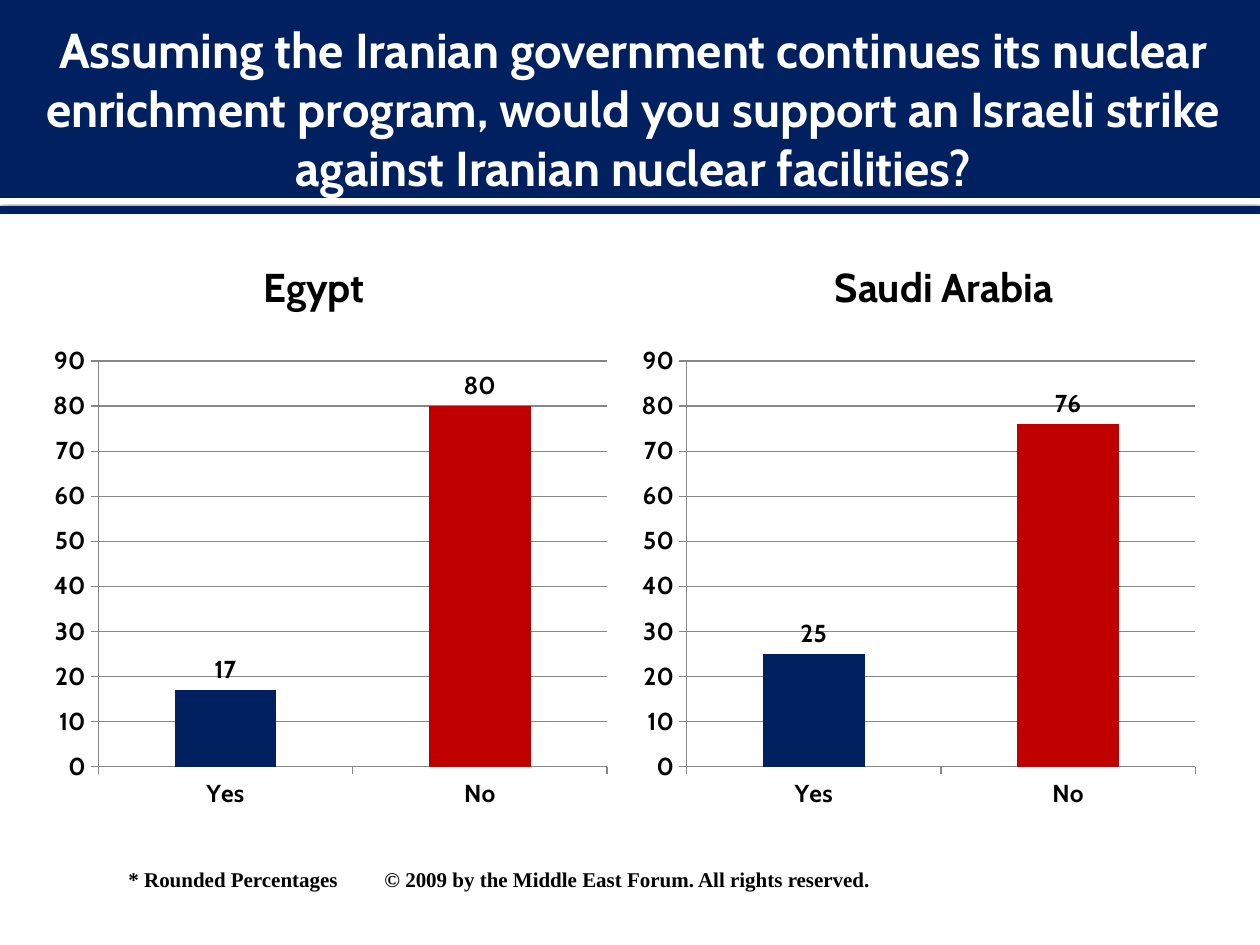
from dataclasses import dataclass

from lxml.etree import SubElement
from pptx import Presentation
from pptx.chart.data import CategoryChartData
from pptx.dml.color import RGBColor
from pptx.enum.chart import XL_CHART_TYPE, XL_LABEL_POSITION, XL_TICK_MARK
from pptx.enum.shapes import MSO_CONNECTOR, MSO_SHAPE
from pptx.enum.text import MSO_ANCHOR, MSO_AUTO_SIZE, PP_ALIGN
from pptx.oxml import parse_xml
from pptx.oxml.ns import nsdecls, qn
from pptx.util import Cm, Pt


@dataclass(frozen=True)
class Theme:
    navy: RGBColor = RGBColor(0x00, 0x20, 0x60)
    red: RGBColor = RGBColor(0xC0, 0x00, 0x00)
    white: RGBColor = RGBColor(0xFF, 0xFF, 0xFF)
    black: RGBColor = RGBColor(0x00, 0x00, 0x00)
    grid: RGBColor = RGBColor(0x87, 0x87, 0x87)
    font: str = "Cabin"
    footer_font: str = "Times New Roman"
    title_size: int = 28
    heading_size: int = 23
    chart_size: int = 14
    footer_size: int = 12


SOFT_SHADOW = (
    f'<a:effectLst {nsdecls("a")}>'
    '<a:outerShdw blurRad="63500" dist="10160" dir="5400000" rotWithShape="0">'
    '<a:srgbClr val="000000"><a:alpha val="60000"/></a:srgbClr>'
    '</a:outerShdw></a:effectLst>'
)


class SlideBuilder:
    def __init__(self, page, theme):
        self.page = page
        self.theme = theme

    def style_font(self, font, size, color, name=None):
        font.name = name or self.theme.font
        font.size = Pt(size)
        font.bold = True
        font.color.rgb = color

    def fill_text(self, box, text, size, color, margins):
        """Set centred bold text; margins are left, top, right, bottom in cm."""
        frame = box.text_frame
        frame.text = text
        frame.word_wrap = True
        frame.auto_size = MSO_AUTO_SIZE.NONE
        frame.vertical_anchor = MSO_ANCHOR.MIDDLE
        (frame.margin_left, frame.margin_top,
         frame.margin_right, frame.margin_bottom) = map(Cm, margins)
        paragraph = frame.paragraphs[0]
        paragraph.alignment = PP_ALIGN.CENTER
        self.style_font(paragraph.runs[0].font, size, color)

    def band(self, top, height, color, shadow=False):
        box = self.page.shapes.add_shape(
            MSO_SHAPE.RECTANGLE, 0, Cm(top), Cm(25.4), Cm(height))
        box.fill.solid()
        box.fill.fore_color.rgb = color
        box.line.fill.background()
        box.shadow.inherit = False
        if shadow:
            properties = box.element.spPr
            properties.replace(properties.find(qn("a:effectLst")),
                               parse_xml(SOFT_SHADOW))

    def rule(self, top):
        line = self.page.shapes.add_connector(
            MSO_CONNECTOR.STRAIGHT, 0, Cm(top), Cm(25.4), Cm(top))
        line.line.color.rgb = self.theme.navy
        line.line.width = Pt(4.5)
        SubElement(line.element.spPr, qn("a:effectLst"))

    def title(self, text):
        title = self.page.shapes.title
        title.left, title.top, title.width, title.height = (
            Cm(0), Cm(0.43), Cm(25.4), Cm(3.48))
        self.fill_text(title, text, self.theme.title_size, self.theme.white,
                       (0.25, 0.13, 0.13, 0.13))
        # The title must lie in front of the navy band.
        title.element.getparent().append(title.element)

    def heading(self, text, left):
        box = self.page.shapes.add_textbox(
            Cm(left), Cm(4.72), Cm(11.23), Cm(1.98))
        self.fill_text(box, text, self.theme.heading_size, self.theme.black,
                       (0.41, 0.25, 0.25, 0.13))

    def column_chart(self, values, left):
        data = CategoryChartData()
        data.categories = ["Yes", "No"]
        data.add_series("Series 1", values)
        chart = self.page.shapes.add_chart(
            XL_CHART_TYPE.COLUMN_CLUSTERED, Cm(left), Cm(6.78),
            Cm(11.63), Cm(9.73), data).chart
        chart.has_title = False
        chart.has_legend = False
        self.style_font(chart.font, self.theme.chart_size, self.theme.black)

        for axis in (chart.category_axis, chart.value_axis):
            axis.major_tick_mark = XL_TICK_MARK.OUTSIDE
            axis.minor_tick_mark = XL_TICK_MARK.NONE
            self.grid_line(axis.format.line)
        value_axis = chart.value_axis
        value_axis.minimum_scale = 0
        value_axis.maximum_scale = 90
        value_axis.major_unit = 10
        value_axis.has_major_gridlines = True
        self.grid_line(value_axis.major_gridlines.format.line)

        plot = chart.plots[0]
        plot.gap_width = 150
        plot.vary_by_categories = False
        plot.has_data_labels = True
        plot.data_labels.show_value = True
        plot.data_labels.position = XL_LABEL_POSITION.OUTSIDE_END
        series = plot.series[0]
        for part, color in ((series, self.theme.navy),
                            (series.points[1], self.theme.red)):
            part.format.fill.solid()
            part.format.fill.fore_color.rgb = color

    def grid_line(self, line):
        line.color.rgb = self.theme.grid
        line.width = Pt(0.75)

    def footer(self, note, copyright_line):
        box = self.page.shapes.add_textbox(
            Cm(2.34), Cm(17.35), Cm(15.52), Cm(0.76))
        frame = box.text_frame
        frame.text = f"{note}\t{copyright_line}"
        frame.word_wrap = False
        frame.auto_size = MSO_AUTO_SIZE.SHAPE_TO_FIT_TEXT
        paragraph = frame.paragraphs[0]
        tabs = SubElement(paragraph._p.get_or_add_pPr(), qn("a:tabLst"))
        SubElement(tabs, qn("a:tab"), pos=str(Cm(5.16)), algn="l")
        for span in paragraph.runs:
            self.style_font(span.font, self.theme.footer_size,
                            self.theme.black, self.theme.footer_font)


def main():
    deck = Presentation()
    deck.slide_width, deck.slide_height = Cm(25.4), Cm(19.05)
    theme = Theme()
    builder = SlideBuilder(deck.slides.add_slide(deck.slide_layouts[5]), theme)

    builder.band(3.99, 0.13, theme.white, shadow=True)
    builder.band(0, 3.99, theme.navy)
    builder.rule(4.24)
    builder.title("Assuming the Iranian government continues its nuclear "
                  "enrichment program, would you support an Israeli strike "
                  "against Iranian nuclear facilities?")
    for country, values, heading_left, chart_left in (
            ("Egypt", (17, 80), 0.64, 0.84),
            ("Saudi Arabia", (25, 76), 13.34, 12.7)):
        builder.heading(country, heading_left)
        builder.column_chart(values, chart_left)
    builder.footer("* Rounded Percentages",
                   "© 2009 by the Middle East Forum. All rights reserved.")
    deck.save("out.pptx")


if __name__ == "__main__":
    main()
